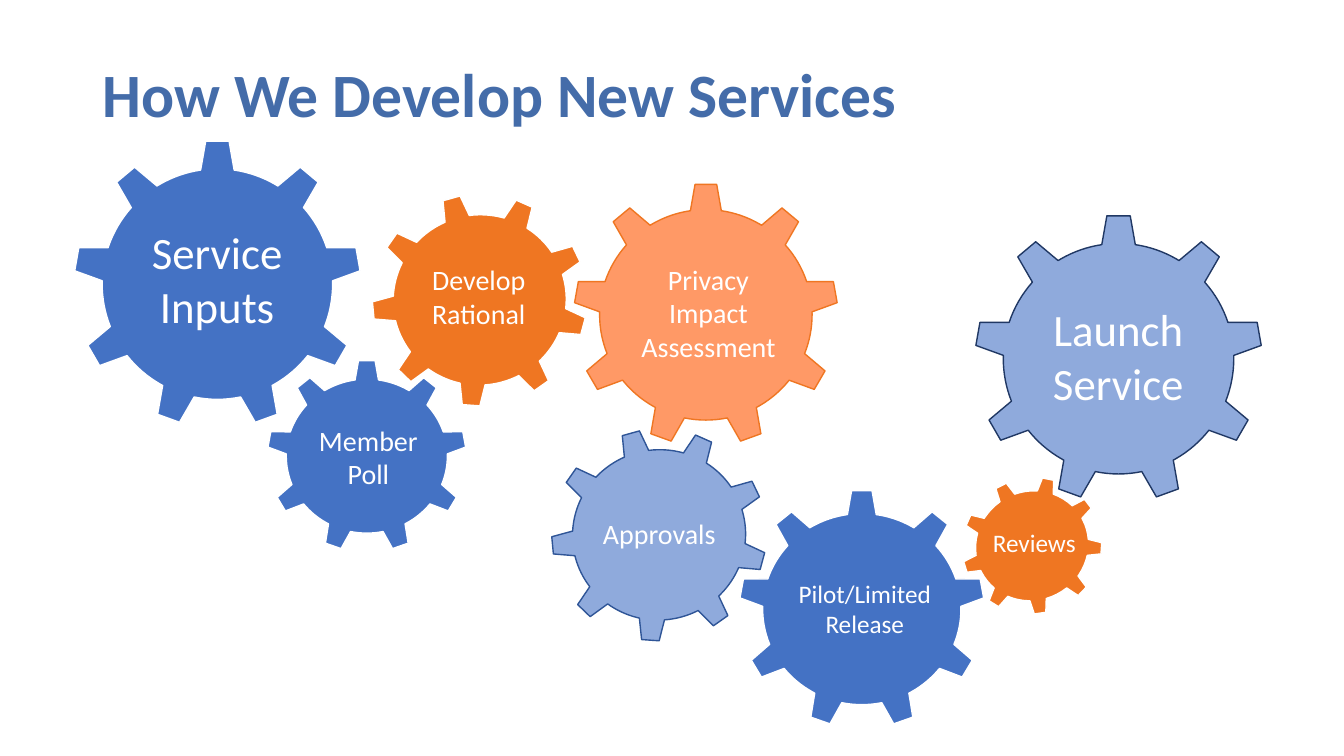
from pptx import Presentation
from pptx.dml.color import RGBColor
from pptx.enum.shapes import MSO_SHAPE as Shape
from pptx.enum.text import MSO_ANCHOR as Anchor, PP_ALIGN as Align
from pptx.util import Cm, Pt

BLUE, LIGHT_BLUE, ORANGE, PEACH = "4472C4", "8FAADC", "EF7622", "FF9966"
WHITE = "FFFFFF"

# box, rotation, fill, outline
GEARS = [
    ((1.85, 3.53, 7.26, 7.26), 0, BLUE, WHITE),
    ((6.73, 9.07, 5.03, 4.85), 0, BLUE, WHITE),
    ((14.45, 4.62, 6.68, 6.63), 0, PEACH, ORANGE),
    ((9.37, 4.88, 5.44, 5.36), 344.5, ORANGE, WHITE),
    ((13.89, 10.8, 5.44, 5.36), 344.5, LIGHT_BLUE, "2F5597"),
    ((18.62, 12.34, 6.2, 6.02), 0, BLUE, WHITE),
    ((24.23, 12.04, 3.56, 3.43), 332.7, ORANGE, WHITE),
    ((24.56, 5.41, 7.26, 7.26), 0, LIGHT_BLUE, "203864"),
]

# text, box, size
LABELS = [
    ("Service Inputs", (3.48, 5.54, 3.99, 3), 32),
    ("Member Poll", (7.29, 10.54, 3.99, 1.96), 20),
    ("Develop Rational", (9.98, 6.5, 4.17, 1.96), 20),
    ("Privacy Impact Assessment", (15.77, 6.48, 4.17, 2.82), 20),
    ("Approvals", (14.53, 12.88, 4.17, 1.12), 20),
    ("Pilot/Limited Release", (19.71, 14.45, 4.17, 1.8), 18),
    ("Reviews", (23.98, 13.16, 4.17, 1.02), 18),
    ("Launch Service", (26.19, 7.49, 3.99, 3), 32),
]


def color(value):
    """Turn a hex string into a colour."""
    return RGBColor.from_string(value)


def add_text(slide, text, box, size, fill=WHITE, bold=False,
             align=Align.CENTER, anchor=Anchor.TOP, line_spacing=1.0):
    """Add a wrapped text box with one formatted paragraph."""
    shape = slide.shapes.add_textbox(*map(Cm, box))
    frame = shape.text_frame
    frame.word_wrap = True
    frame.vertical_anchor = anchor
    paragraph = frame.paragraphs[0]
    paragraph.alignment = align
    paragraph.line_spacing = line_spacing
    run = paragraph.add_run()
    run.text = text
    run.font.name = "Calibri"
    run.font.size = Pt(size)
    run.font.bold = bold
    run.font.color.rgb = color(fill)


def add_gear(slide, box, rotation, fill, outline):
    """Add a nine-toothed gear."""
    shape = slide.shapes.add_shape(Shape.GEAR_9, *map(Cm, box))
    shape.rotation = rotation
    shape.shadow.inherit = False
    shape.fill.solid()
    shape.fill.fore_color.rgb = color(fill)
    shape.line.color.rgb = color(outline)
    shape.line.width = Pt(1)


def main():
    """Build the slide of interlocking gears and save it."""
    presentation = Presentation()
    presentation.slide_width = Cm(33.87)
    presentation.slide_height = Cm(19.05)
    slide = presentation.slides.add_slide(presentation.slide_layouts[6])
    add_text(slide, "How We Develop New Services", (2.34, 1.02, 29.21, 2.41), 44,
             fill="446CA9", bold=True, align=Align.LEFT, anchor=Anchor.BOTTOM,
             line_spacing=0.9)
    for gear in GEARS:
        add_gear(slide, *gear)
    for label in LABELS:
        add_text(slide, *label)
    presentation.save("out.pptx")


if __name__ == "__main__":
    main()
